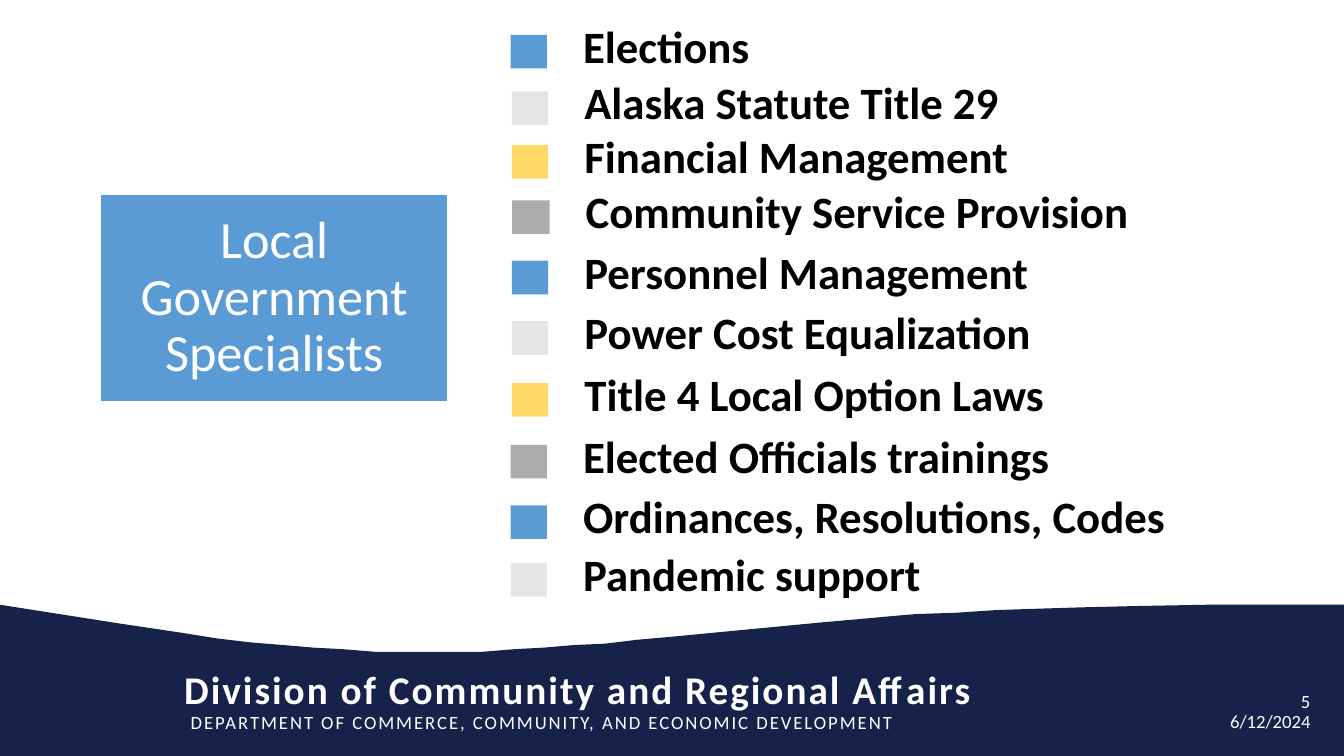
from dataclasses import dataclass

import pptx
import pptx.dml.color
import pptx.enum.shapes
import pptx.enum.text
import pptx.util

Inches = pptx.util.Inches
Align = pptx.enum.text.PP_ALIGN
Anchor = pptx.enum.text.MSO_ANCHOR


@dataclass(frozen=True)
class Theme:
    font: str = "Calibri"
    white: str = "FFFFFF"
    black: str = "000000"
    navy: str = "17224B"
    blue: str = "5B9BD5"
    light: str = "E7E6E6"
    gold: str = "FFD965"
    grey: str = "AEABAB"
    small: float = 10
    division: float = 21
    topic: float = 24
    heading: float = 28
    tracking: int = 107


@dataclass(frozen=True)
class Topic:
    label: str
    left: float
    top: float
    text_width: float
    marker_width: float = 0.27


THEME = Theme()
MARKER_COLORS = (THEME.blue, THEME.light, THEME.gold, THEME.grey)
SLIDE_WIDTH = 10
SLIDE_HEIGHT = SLIDE_WIDTH * 9 / 16

TOPICS = (
    Topic("Elections", 3.8, 0.26, 3.07),
    Topic("Alaska Statute Title 29", 3.81, 0.68, 4.17),
    Topic("Financial Management", 3.81, 1.08, 4.35),
    Topic("Community Service Provision", 3.81, 1.49, 5.73, 0.28),
    Topic("Personnel Management", 3.81, 1.94, 5.53),
    Topic("Power Cost Equalization", 3.81, 2.39, 5.75),
    Topic("Title 4 Local Option Laws", 3.81, 2.85, 5.75),
    Topic("Elected Officials trainings", 3.8, 3.31, 5.75),
    Topic("Ordinances, Resolutions, Codes", 3.8, 3.76, 5.53),
    Topic("Pandemic support", 3.8, 4.19, 5.75),
)

WAVE_CREST = (
    (0, 4.5), (0.89, 4.64), (1.16, 4.68), (1.36, 4.71), (1.61, 4.75),
    (1.86, 4.78), (2.11, 4.8), (2.34, 4.82), (2.54, 4.83), (2.79, 4.85),
    (3.19, 4.85), (3.59, 4.85), (3.84, 4.83), (4.04, 4.82), (4.27, 4.8),
    (4.5, 4.79), (4.75, 4.76), (4.98, 4.74), (6.13, 4.63), (6.36, 4.61),
    (6.58, 4.59), (6.81, 4.57), (7.11, 4.56), (7.41, 4.54), (7.71, 4.53),
    (8.04, 4.52), (8.45, 4.51), (8.98, 4.5), (10, 4.5),
)


def color(value: str) -> pptx.dml.color.RGBColor:
    return pptx.dml.color.RGBColor.from_string(value)


def paint(shape, fill: str) -> None:
    shape.shadow.inherit = False
    shape.fill.solid()
    shape.fill.fore_color.rgb = color(fill)
    shape.line.fill.background()


def add_rectangle(page, left: float, top: float, width: float, height: float, fill: str):
    rectangle = page.shapes.add_shape(
        pptx.enum.shapes.MSO_SHAPE.RECTANGLE,
        Inches(left), Inches(top), Inches(width), Inches(height))
    paint(rectangle, fill)
    return rectangle


def add_text_box(page, left: float, top: float, width: float, height: float):
    return page.shapes.add_textbox(
        Inches(left), Inches(top), Inches(width), Inches(height))


def write(box, text: str, *, size: float, ink: str = THEME.white, bold: bool = False,
          align=Align.LEFT, anchor=Anchor.TOP, inset: float | None = None,
          line_spacing: float = 1.0, tracking: int = 0) -> None:
    frame = box.text_frame
    frame.word_wrap = True
    frame.vertical_anchor = anchor
    if inset is not None:
        frame.margin_left = frame.margin_right = Inches(inset)
        frame.margin_top = frame.margin_bottom = Inches(inset)
    para = frame.paragraphs[0]
    para.alignment = align
    para.line_spacing = line_spacing
    span = para.add_run()
    span.text = text
    span.font.name = THEME.font
    span.font.size = pptx.util.Pt(size)
    span.font.bold = bold
    span.font.color.rgb = color(ink)
    if tracking:
        span.font._element.set("spc", str(tracking))


def draw_footer(page) -> None:
    start, *crest = WAVE_CREST
    outline = page.shapes.build_freeform(
        Inches(start[0]), Inches(start[1]), scale=1.0)
    corners = [(SLIDE_WIDTH, SLIDE_HEIGHT), (0, SLIDE_HEIGHT)]
    outline.add_line_segments(
        [(Inches(x), Inches(y)) for x, y in crest + corners], close=True)
    paint(outline.convert_to_shape(), THEME.navy)

    write(add_text_box(page, 1.32, 5.24, 6.3, 0.27),
          "DEPARTMENT OF COMMERCE, COMMUNITY, AND ECONOMIC DEVELOPMENT",
          size=THEME.small, tracking=THEME.tracking)
    write(add_text_box(page, 1.37, 4.95, 6.25, 0.35),
          "Division of Community and Regional Affairs",
          size=THEME.division, bold=True, inset=0, tracking=THEME.tracking)
    write(add_text_box(page, 7.45, 5.13, 2.3, 0.17), "5",
          size=THEME.small, align=Align.RIGHT, inset=0)
    write(add_text_box(page, 8.91, 5.28, 0.84, 0.17), "6/12/2024",
          size=THEME.small, align=Align.RIGHT, inset=0)


def draw_heading(page) -> None:
    heading = add_rectangle(page, 0.74, 1.44, 2.6, 1.56, THEME.blue)
    heading.line.color.rgb = color(THEME.white)
    heading.line.width = pptx.util.Pt(2)
    write(heading, "Local Government Specialists", size=THEME.heading,
          align=Align.CENTER, anchor=Anchor.MIDDLE, inset=0.12, line_spacing=0.9)


def draw_topic(page, topic: Topic, fill: str) -> None:
    add_rectangle(page, topic.left, topic.top, topic.marker_width, 0.25, fill)
    label_left = topic.left + topic.marker_width + 0.17
    write(add_text_box(page, label_left, topic.top - 0.17, topic.text_width, 0.5),
          topic.label, size=THEME.topic, ink=THEME.black, bold=True)


def main() -> None:
    deck = pptx.Presentation()
    deck.slide_width = Inches(SLIDE_WIDTH)
    deck.slide_height = Inches(SLIDE_HEIGHT)
    page = deck.slides.add_slide(deck.slide_layouts[6])
    draw_footer(page)
    draw_heading(page)
    for index, topic in enumerate(TOPICS):
        draw_topic(page, topic, MARKER_COLORS[index % len(MARKER_COLORS)])
    deck.save("out.pptx")


if __name__ == "__main__":
    main()
